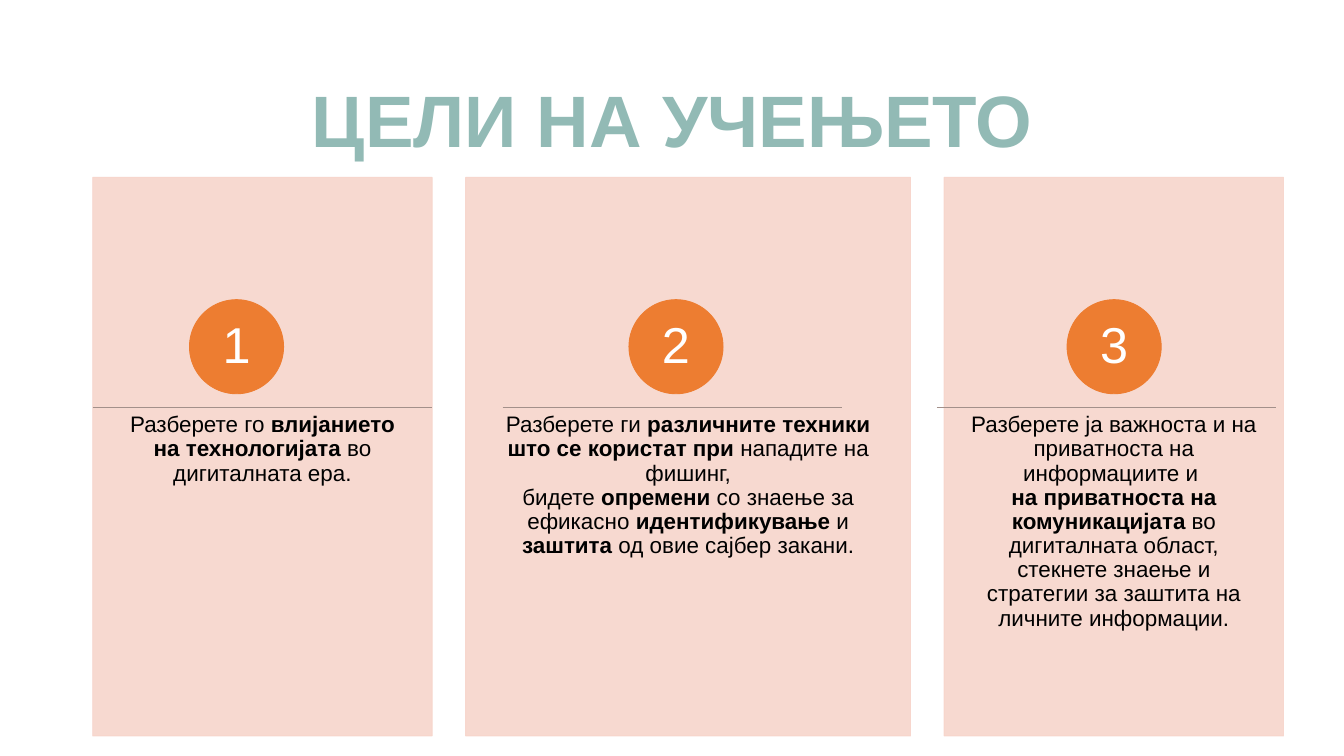
import pptx
import pptx.dml.color
import pptx.enum.shapes
import pptx.enum.text
import pptx.oxml
import pptx.oxml.ns
import pptx.util
from dataclasses import dataclass

Inches = pptx.util.Inches
Pt = pptx.util.Pt
RGB = pptx.dml.color.RGBColor.from_string
SHAPE = pptx.enum.shapes.MSO_SHAPE
ANCHOR = pptx.enum.text.MSO_ANCHOR
A_NS = pptx.oxml.ns.nsdecls("a")


@dataclass(frozen=True)
class Theme:
    font: str = "Arial"
    title: str = "92BAB5"
    card: str = "F7D5CB"
    accent: str = "ED7D31"
    rule: str = "A3908A"
    body: str = "000000"
    number: str = "FFFFFF"
    title_size: int = 78
    number_size: int = 54
    body_size: int = 24


THEME = Theme()
TITLE = "ЦЕЛИ НА УЧЕЊЕТО"
CARD_TOP, CARD_HEIGHT = 2.64, 8.31
RULE_WIDTH = 5.05

# Card left and width, badge left, rule left, paragraphs (bold between asterisks)
GOALS = [
    (1.38, 5.05, 2.82, 1.38,
     ["Разберете го *влијанието на технологијата *во дигиталната ера."]),
    (6.93, 6.62, 9.36, 7.48,
     ["Разберете ги *различните техники што се користат при *нападите на фишинг,",
      "бидете *опремени* со знаење за ефикасно *идентификување *и *заштита *"
      "од овие сајбер закани."]),
    (14.05, 5.05, 15.88, 13.94,
     ["Разберете ја важноста и на приватноста на информациите и ",
      "*на приватноста на комуникацијата *во дигиталната област, "
      "стекнете знаење и стратегии за заштита на личните информации."]),
]


def set_frame(tf, anchor, side, end):
    tf.word_wrap = True
    tf.auto_size = pptx.enum.text.MSO_AUTO_SIZE.NONE
    tf.vertical_anchor = anchor
    tf.margin_left = tf.margin_right = Inches(side)
    tf.margin_top = tf.margin_bottom = Inches(end)


def write_paragraph(p, text, size, color, bold=False):
    p.alignment = pptx.enum.text.PP_ALIGN.CENTER
    p.line_spacing = 0.9
    p.space_before = p.space_after = Pt(0)
    for i, part in enumerate(text.split("*")):
        if part:
            r = p.add_run()
            r.text = part
            r.font.name = THEME.font
            r.font.size = Pt(size)
            r.font.bold = bold or i % 2 == 1
            r.font.color.rgb = RGB(color)


def add_filled(s, kind, left, top, width, height, color, alpha=None):
    sp = s.shapes.add_shape(kind, Inches(left), Inches(top), Inches(width), Inches(height))
    sp.shadow.inherit = False
    sp.fill.solid()
    sp.fill.fore_color.rgb = RGB(color)
    sp.line.color.rgb = RGB(color)
    sp.line.width = Pt(1)
    if alpha:
        for clr in sp._element.spPr.iter(pptx.oxml.ns.qn("a:srgbClr")):
            clr.append(pptx.oxml.parse_xml(f'<a:alpha {A_NS} val="{alpha * 1000}"/>'))
    return sp


def add_title(s, left, top, width, height):
    sp = s.shapes.title
    sp.left, sp.top = Inches(left), Inches(top)
    sp.width, sp.height = Inches(width), Inches(height)
    set_frame(sp.text_frame, ANCHOR.MIDDLE, 0.1, 0.05)
    write_paragraph(sp.text_frame.paragraphs[0], TITLE, THEME.title_size, THEME.title, True)


def add_goal(s, left, top, width, height, number, badge_left, rule_left, paragraphs):
    # Card
    add_filled(s, SHAPE.RECTANGLE, left, top, width, height, THEME.card, alpha=90)

    # Description
    box = s.shapes.add_textbox(Inches(left), Inches(top + 3.15), Inches(width), Inches(4.98))
    tf = box.text_frame
    set_frame(tf, ANCHOR.TOP, 0.39, 0.36)
    for i, text in enumerate(paragraphs):
        p = tf.add_paragraph() if i else tf.paragraphs[0]
        write_paragraph(p, text, THEME.body_size, THEME.body)

    # Numbered badge
    badge = add_filled(s, SHAPE.OVAL, badge_left, top + 1.82, 1.4, 1.4, THEME.accent)
    set_frame(badge.text_frame, ANCHOR.MIDDLE, 0.11, 0.01)
    write_paragraph(badge.text_frame.paragraphs[0], str(number),
                    THEME.number_size, THEME.number)

    # Rule above the description
    y = Inches(top + 3.42)
    rule = s.shapes.add_connector(pptx.enum.shapes.MSO_CONNECTOR.STRAIGHT,
                                  Inches(rule_left), y, Inches(rule_left + RULE_WIDTH), y)
    rule.line.color.rgb = RGB(THEME.rule)
    rule.line.width = Pt(1)
    rule._element.spPr.append(pptx.oxml.parse_xml(f"<a:effectLst {A_NS}/>"))


def main():
    prs = pptx.Presentation()
    prs.slide_width, prs.slide_height = Inches(20), Inches(11.25)
    s = prs.slides.add_slide(prs.slide_layouts[5])
    add_title(s, 1.38, 0.91, 17.25, 1.86)
    for number, (left, width, badge_left, rule_left, paragraphs) in enumerate(GOALS, 1):
        add_goal(s, left, CARD_TOP, width, CARD_HEIGHT,
                 number, badge_left, rule_left, paragraphs)
    prs.save("out.pptx")


if __name__ == "__main__":
    main()
